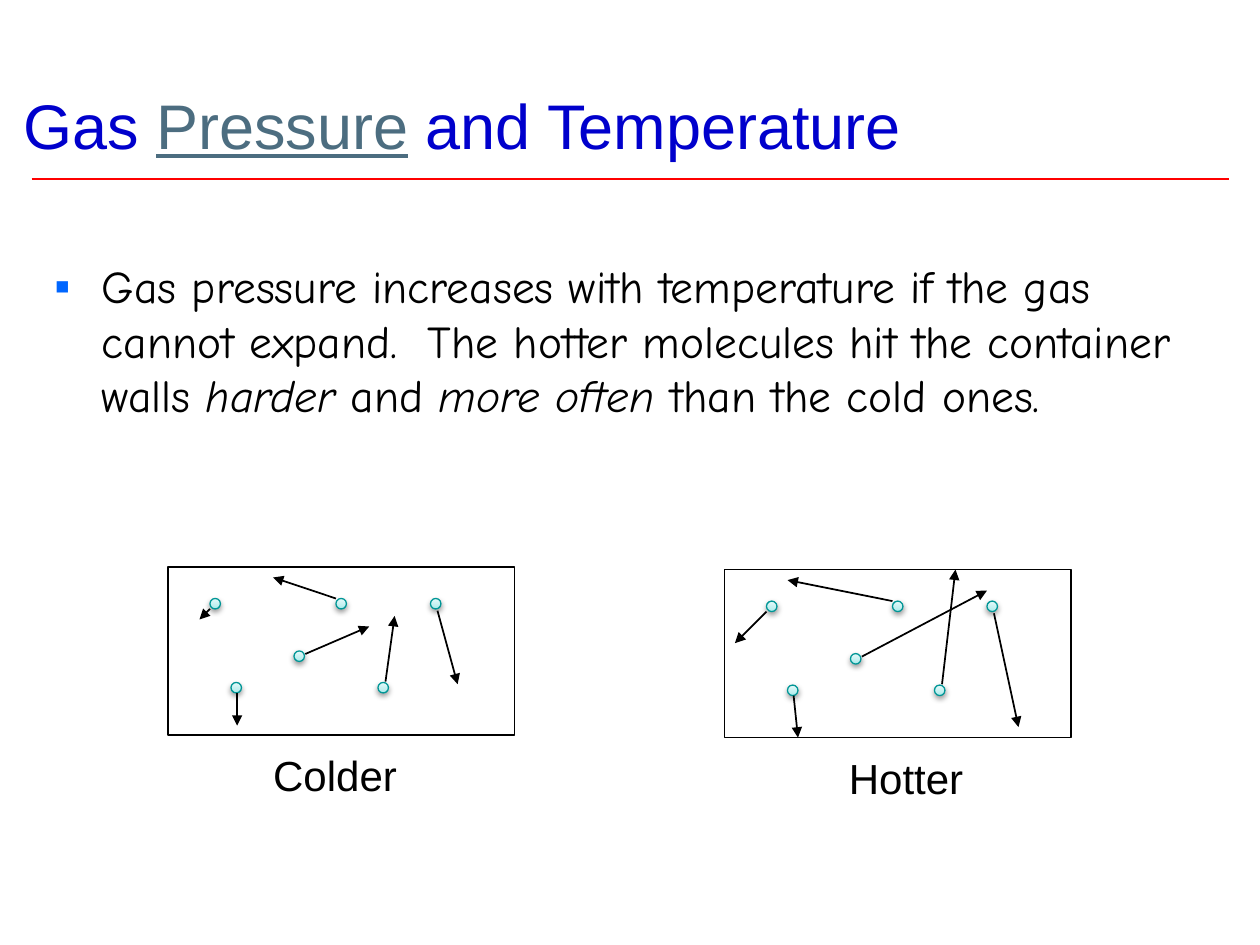
from dataclasses import dataclass

import pptx
import pptx.dml.color
import pptx.enum.shapes
import pptx.enum.text
import pptx.oxml
import pptx.oxml.ns
import pptx.util
from copy import deepcopy

Pt = pptx.util.Pt
qn = pptx.oxml.ns.qn
NAMESPACE = pptx.oxml.ns.nsdecls("a")
SHAPE = pptx.enum.shapes.MSO_SHAPE
ANCHOR = pptx.enum.text.MSO_ANCHOR


def color(value):
    return pptx.dml.color.RGBColor.from_string(value)


@dataclass(frozen=True)
class Theme:
    heading_font: str = "Arial"
    body_font: str = "Comic Neue"
    title_size: float = 36
    body_size: float = 26
    label_size: float = 24
    title: str = "0000CC"
    underlined: str = "4C6D80"
    rule: str = "FF0000"
    ink: str = "000000"
    bullet: str = "0066FF"
    molecule_line: str = "009696"
    molecule_stops: tuple = ((0, "A5EBEB"), (0.35, "C1F0F0"), (1, "E7FAFA"))


MOLECULE_SIZE = 6
# Offsets in points from the top left corner of a container
MOLECULES = [(24, 18), (72, 48), (36, 66), (96, 18), (120, 66), (150, 18)]
ARROW_STARTS = [(24, 24), (96, 18), (39.5, 72), (78.5, 49.7), (124.3, 65.5), (154, 25)]
COLDER_ENDS = [(18, 30), (60, 6), (39.5, 90.7), (115, 34), (129.5, 28), (165.5, 67)]
HOTTER_ENDS = [(6, 42), (36, 6), (42, 96), (150, 12), (132, 0), (168, 90)]


class SlideBuilder:
    def __init__(self, slide, theme):
        self.slide = slide
        self.theme = theme

    def format_run(self, run, font_name, size, value):
        run.font.name = font_name
        run.font.size = Pt(size)
        run.font.color.rgb = color(value)

    def title(self, parts):
        """Fill the title from (text, underlined) parts."""
        shape = self.slide.shapes.title
        shape.left, shape.top, shape.width, shape.height = Pt(6), Pt(0), Pt(708), Pt(96)
        frame = shape.text_frame
        frame.auto_size = pptx.enum.text.MSO_AUTO_SIZE.NONE
        frame.vertical_anchor = ANCHOR.BOTTOM
        paragraph = frame.paragraphs[0]
        paragraph.alignment = pptx.enum.text.PP_ALIGN.LEFT
        for text, underlined in parts:
            run = paragraph.add_run()
            run.text = text
            value = self.theme.underlined if underlined else self.theme.title
            self.format_run(run, self.theme.heading_font, self.theme.title_size, value)
            run.font.underline = underlined

    def text_box(self, left, top, width, height, wrap):
        box = self.slide.shapes.add_textbox(Pt(left), Pt(top), Pt(width), Pt(height))
        box.text_frame.word_wrap = wrap
        return box.text_frame

    def bullet_text(self, parts):
        """Add one bulleted paragraph from (text, italic) parts."""
        paragraph = self.text_box(24, 144, 660, 174, True).paragraphs[0]
        properties = paragraph._p.get_or_add_pPr()
        properties.set("marL", str(Pt(27)))
        properties.set("indent", str(-Pt(27)))
        for markup in (
            f'<a:buClr {NAMESPACE}><a:srgbClr val="{self.theme.bullet}"/></a:buClr>',
            f'<a:buFont {NAMESPACE} typeface="{self.theme.heading_font}"/>',
            f'<a:buChar {NAMESPACE} char="▪"/>',
        ):
            properties.append(pptx.oxml.parse_xml(markup))
        for text, italic in parts:
            run = paragraph.add_run()
            run.text = text
            self.format_run(run, self.theme.body_font, self.theme.body_size, self.theme.ink)
            run.font.italic = italic

    def label(self, text, left, top, width):
        frame = self.text_box(left, top, width, 36, False)
        frame.text = text
        run = frame.paragraphs[0].runs[0]
        self.format_run(run, self.theme.heading_font, self.theme.label_size, self.theme.ink)

    def line(self, start, end, value, width, arrow=False):
        connector = self.slide.shapes.add_connector(
            pptx.enum.shapes.MSO_CONNECTOR.STRAIGHT, *map(Pt, start + end))
        connector.line.color.rgb = color(value)
        connector.line.width = Pt(width)
        if arrow:
            connector.line._get_or_add_ln().append(
                pptx.oxml.parse_xml(f'<a:tailEnd {NAMESPACE} type="triangle"/>'))
        connector._element.spPr.append(pptx.oxml.parse_xml(f"<a:effectLst {NAMESPACE}/>"))

    def outline(self, kind, left, top, width, height, value, line_width):
        shape = self.slide.shapes.add_shape(kind, Pt(left), Pt(top), Pt(width), Pt(height))
        shape.shadow.inherit = False
        shape.fill.background()
        shape.line.color.rgb = color(value)
        shape.line.width = Pt(line_width)
        return shape

    def molecule(self, left, top):
        shape = self.outline(SHAPE.OVAL, left, top, MOLECULE_SIZE, MOLECULE_SIZE,
                             self.theme.molecule_line, 0.75)
        shape.fill.gradient()
        shape.fill.gradient_angle = 90
        properties = shape._element.spPr
        stop_list = properties.find(".//" + qn("a:gsLst"))
        stop_list.append(deepcopy(stop_list[0]))
        for stop, (position, value) in zip(shape.fill.gradient_stops, self.theme.molecule_stops):
            stop.position = position
            stop.color.rgb = color(value)
        properties.find(qn("a:effectLst")).append(pptx.oxml.parse_xml(
            f'<a:outerShdw {NAMESPACE} blurRad="{Pt(3.1)}" dist="{Pt(1.6)}" dir="5400000" '
            f'rotWithShape="0"><a:srgbClr val="{self.theme.ink}"><a:alpha val="38000"/>'
            '</a:srgbClr></a:outerShdw>'))

    def container(self, left, top, text, label_offset, label_width, arrow_ends):
        """Draw a labelled gas box; longer arrows stand for faster molecules."""
        self.label(text, left + label_offset, top + 100.8, label_width)
        self.outline(SHAPE.RECTANGLE, left, top, 198, 96, self.theme.ink, 1)
        for x, y in MOLECULES:
            self.molecule(left + x, top + y)
        for start, end in zip(ARROW_STARTS, arrow_ends):
            self.line((left + start[0], top + start[1]), (left + end[0], top + end[1]),
                      self.theme.ink, 1, arrow=True)


def main():
    presentation = pptx.Presentation()
    presentation.slide_width, presentation.slide_height = Pt(720), Pt(540)
    theme = Theme()
    builder = SlideBuilder(presentation.slides.add_slide(presentation.slide_layouts[5]), theme)
    builder.line((18, 102.25), (702, 102.25), theme.rule, 1.5)
    builder.title([("Gas ", False), ("Pressure", True), (" and Temperature", False)])
    builder.bullet_text([
        ("Gas pressure increases with temperature if the gas cannot expand.  "
         "The hotter molecules hit the container walls ", False),
        ("harder", True),
        (" and ", False),
        ("more often", True),
        (" than the cold ones.", False),
    ])
    builder.container(96, 324, "Colder", 53, 85, COLDER_ENDS)
    builder.container(414, 325.5, "Hotter", 64, 80, HOTTER_ENDS)
    presentation.save("out.pptx")


if __name__ == "__main__":
    main()
